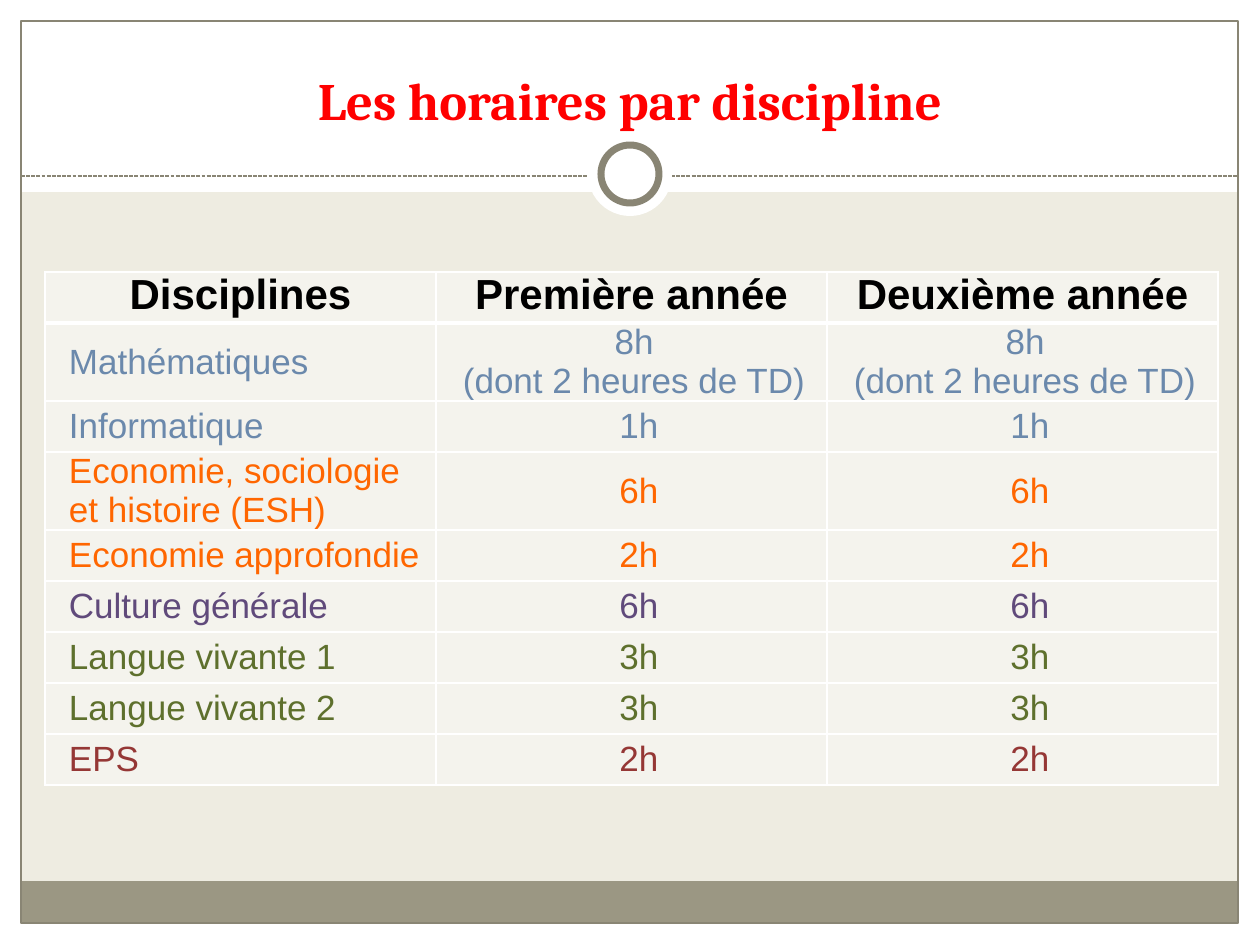
"""Build the slide listing the weekly teaching hours per discipline."""
from lxml.etree import SubElement
from pptx import Presentation
from pptx.dml.color import RGBColor
from pptx.enum.dml import MSO_LINE
from pptx.enum.shapes import MSO_CONNECTOR, MSO_SHAPE
from pptx.enum.text import MSO_ANCHOR, PP_ALIGN
from pptx.oxml import parse_xml
from pptx.oxml.ns import nsdecls, qn
from pptx.util import Pt

COLORS = {
    "paper": "EEECE1", "white": "FFFFFF", "band": "9B9783", "line": "898574",
    "title": "FF0000", "head": "000000", "science": "6B89AC",
    "economy": "FF6600", "culture": "604A7B", "language": "5E702D",
    "sport": "953735",
}
TITLE = "Les horaires par discipline"
HEADER = ("Disciplines", "Première année", "Deuxième année")
MATHS = "8h \n(dont 2 heures de TD) "
ROWS = [
    ("Mathématiques", MATHS, "science"),
    ("Informatique", "1h", "science"),
    ("Economie, sociologie et histoire (ESH)", "6h", "economy"),
    ("Economie approfondie", "2h", "economy"),
    ("Culture générale", "6h", "culture"),
    ("Langue vivante 1", "3h", "language"),
    ("Langue vivante 2", "3h", "language"),
    ("EPS", "2h", "sport"),
]
RECT, OVAL = MSO_SHAPE.RECTANGLE, MSO_SHAPE.OVAL
FRAME = [
    (RECT, (0, 924, 1260, 21), "white", None),
    (RECT, (0, 0, 1260, 192), "white", None),
    (RECT, (0, 0, 21, 945), "white", None),
    (RECT, (1239, 0, 21, 945), "white", None),
    (RECT, (21, 881, 1217, 43), "band", None),
    (RECT, (21, 21, 1217, 902), None, 0.75),
]
RINGS = [
    (OVAL, (588, 132, 84, 84), "white", None),
    (OVAL, (601, 145, 58, 58), "white", 4),
]
TABLE_LEFT, TABLE_TOP, COL_W, ROW_H = 45, 272, 391, 51
CELL_INSET, CELL_INDENT = 9, 15


def px(n):
    return round(n * 914400 / 126)


def rgb(name):
    return RGBColor.from_string(COLORS[name])


def write(tf, text, font="Arial", size=20, color="head", bold=False,
          align=PP_ALIGN.LEFT, indent=0):
    for i, line in enumerate(text.split("\n")):
        p = tf.add_paragraph() if i else tf.paragraphs[0]
        p.alignment = align
        if indent:
            pPr = p._p.get_or_add_pPr()
            pPr.set("marL", str(px(indent)))
            pPr.set("indent", "0")
        r = p.add_run()
        r.text = line
        r.font.name, r.font.size, r.font.bold = font, Pt(size), bold
        r.font.color.rgb = rgb(color)


def add_shapes(s, shapes):
    for kind, box, fill, width in shapes:
        sp = s.shapes.add_shape(kind, *map(px, box))
        sp.shadow.inherit = False
        if fill:
            sp.fill.solid()
            sp.fill.fore_color.rgb = rgb(fill)
        else:
            sp.fill.background()
        if width:
            sp.line.color.rgb = rgb("line")
            sp.line.width = Pt(width)
        else:
            sp.line.fill.background()


def add_divider(s, left, right, y):
    line = s.shapes.add_connector(
        MSO_CONNECTOR.STRAIGHT, px(left), px(y), px(right), px(y))
    line.line.color.rgb = rgb("line")
    line.line.width = Pt(0.75)
    line.line.dash_style = MSO_LINE.SQUARE_DOT
    SubElement(line._element.spPr, qn("a:effectLst"))


def style_cell(cell, bottom):
    cell.margin_left = cell.margin_right = px(CELL_INSET)
    cell.margin_top = cell.margin_bottom = 0
    cell.fill.solid()
    cell.fill.fore_color.rgb = rgb("white")
    tcPr = cell._tc.get_or_add_tcPr()
    SubElement(tcPr.find(".//" + qn("a:srgbClr")), qn("a:alpha"), val="40000")
    for i, (side, width) in enumerate(zip("LRTB", (1, 1, 1, bottom))):
        tcPr.insert(i, parse_xml(
            f'<a:ln{side} {nsdecls("a")} w="{Pt(width)}"><a:solidFill>'
            f'<a:srgbClr val="{COLORS["white"]}"/></a:solidFill></a:ln{side}>'))


def add_hours_table(s):
    n_rows, n_cols = len(ROWS) + 1, len(HEADER)
    table = s.shapes.add_table(
        n_rows, n_cols, px(TABLE_LEFT), px(TABLE_TOP),
        px(COL_W * n_cols), px(ROW_H * n_rows)).table
    table.horz_banding = False
    for col in table.columns:
        col.width = px(COL_W)
    for row in table.rows:
        row.height = px(ROW_H)
    for c, text in enumerate(HEADER):
        cell = table.cell(0, c)
        style_cell(cell, bottom=3)
        write(cell.text_frame, text, size=24, bold=True, align=PP_ALIGN.CENTER)
    for r, (name, hours, color) in enumerate(ROWS, 1):
        for c, text in enumerate((name, hours, hours)):
            cell = table.cell(r, c)
            style_cell(cell, bottom=1)
            if r == 1:
                cell._tc.tcPr.find(qn("a:lnT")).set("w", str(Pt(3)))
            cell.vertical_anchor = MSO_ANCHOR.MIDDLE
            write(cell.text_frame, text, color=color, indent=CELL_INDENT,
                  align=PP_ALIGN.CENTER if c else PP_ALIGN.LEFT)


def main():
    prs = Presentation()
    prs.slide_width, prs.slide_height = px(1260), px(945)
    s = prs.slides.add_slide(prs.slide_layouts[5])
    s.background.fill.solid()
    s.background.fill.fore_color.rgb = rgb("paper")

    add_shapes(s, FRAME)
    add_divider(s, 21, 1239, 176)
    add_shapes(s, RINGS)

    title = s.shapes.title
    title._element.getparent().append(title._element)
    title.left, title.top, title.width, title.height = map(
        px, (42, 32, 1176, 105))
    title.text_frame.vertical_anchor = MSO_ANCHOR.BOTTOM
    write(title.text_frame, TITLE, font="Cambria", size=30, color="title",
          bold=True, align=PP_ALIGN.CENTER)

    add_hours_table(s)
    prs.save("out.pptx")


if __name__ == "__main__":
    main()
